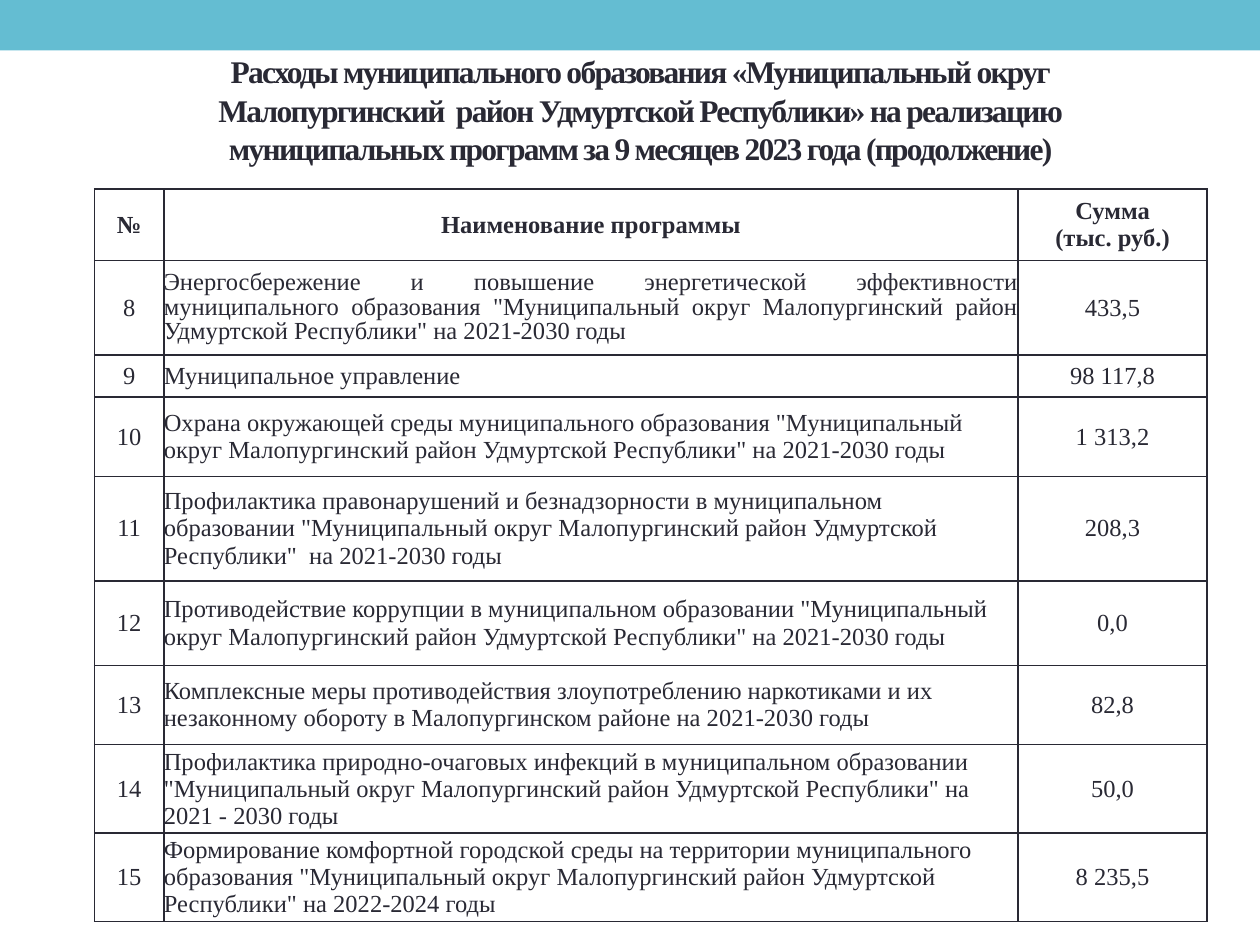
from dataclasses import dataclass
from lxml import etree
from pptx import Presentation
from pptx.dml.color import RGBColor
from pptx.enum import shapes, text
from pptx.oxml.ns import qn
from pptx.util import Inches, Pt


@dataclass(frozen=True)
class Theme:
    ink: str = "292934"
    band: str = "64BDD2"
    font: str = "Times New Roman"
    head: int = 18
    body: int = 14
    rule: int = 1


THEME = Theme()
WIDE, HIGH = Inches(10), Inches(7.5)
MID, LEFT, FULL = text.PP_ALIGN.CENTER, text.PP_ALIGN.LEFT, text.PP_ALIGN.JUSTIFY

TITLE = [
    "Расходы муниципального образования «Муниципальный округ",
    "Малопургинский  район Удмуртской Республики» на реализацию",
    "муниципальных программ за 9 месяцев 2023 года (продолжение)",
]
HEADS = ["№", "Наименование программы", "Сумма\n(тыс. руб.)"]
ROWS = [
    ("Энергосбережение и повышение энергетической эффективности муниципального образования "
     '"Муниципальный округ Малопургинский район Удмуртской Республики" на 2021-2030 годы', "433,5"),
    ("Муниципальное управление", "98 117,8"),
    ('Охрана окружающей среды муниципального образования "Муниципальный округ '
     'Малопургинский район Удмуртской Республики" на 2021-2030 годы', "1 313,2"),
    ("Профилактика правонарушений и безнадзорности в муниципальном образовании "
     '"Муниципальный округ Малопургинский район Удмуртской Республики"  на 2021-2030 годы', "208,3"),
    ('Противодействие коррупции в муниципальном образовании "Муниципальный округ '
     'Малопургинский район Удмуртской Республики" на 2021-2030 годы', "0,0"),
    ("Комплексные меры противодействия злоупотреблению наркотиками и их незаконному обороту "
     "в Малопургинском районе на 2021-2030 годы", "82,8"),
    ("Профилактика природно-очаговых инфекций в муниципальном образовании "
     '"Муниципальный округ Малопургинский район Удмуртской Республики" на 2021 - 2030 годы', "50,0"),
    ("Формирование комфортной городской среды на территории муниципального образования "
     '"Муниципальный округ Малопургинский район Удмуртской Республики" на 2022-2024 годы', "8 235,5"),
]
FIRST = 8
COLS = [55, 678, 150]
TALL = [53, 75, 32, 63, 83, 67, 63, 67, 67]


def area(x, y, w, h):
    return int(x * WIDE), int(y * HIGH), int(w * WIDE), int(h * HIGH)


def write(frame, words, size=THEME.body, bold=False, align=MID, lead=None, track=None):
    frame.word_wrap = True
    frame.vertical_anchor = text.MSO_ANCHOR.MIDDLE
    frame.text = words
    for para in frame.paragraphs:
        para.alignment = align
        if lead:
            para.line_spacing = lead
        for run in para.runs:
            font = run.font
            font.name, font.size, font.bold = THEME.font, Pt(size), bold
            font.color.rgb = RGBColor.from_string(THEME.ink)
            if track:
                run._r.get_or_add_rPr().set("spc", str(track * 100))


def border(cell):
    props = cell._tc.get_or_add_tcPr()
    for spot, side in enumerate(("lnL", "lnR", "lnT", "lnB")):
        line = etree.Element(qn(f"a:{side}"), w=str(Pt(THEME.rule)))
        fill = etree.SubElement(line, qn("a:solidFill"))
        etree.SubElement(fill, qn("a:srgbClr"), val=THEME.ink)
        props.insert(spot, line)


def band(slide, box):
    bar = slide.shapes.add_shape(shapes.MSO_SHAPE.RECTANGLE, *box)
    bar.shadow.inherit = False
    bar.fill.solid()
    bar.fill.fore_color.rgb = RGBColor.from_string(THEME.band)
    bar.line.fill.background()


def title(slide, box):
    frame = slide.shapes.add_textbox(*box).text_frame
    write(frame, "\v".join(TITLE), size=THEME.head, bold=True, lead=1.03, track=-1)


def budget(slide, box):
    grid = slide.shapes.add_table(len(TALL), len(COLS), *box).table
    for col, part in zip(grid.columns, COLS):
        col.width = box[2] * part // sum(COLS)
    for row, part in zip(grid.rows, TALL):
        row.height = box[3] * part // sum(TALL)
    data = [HEADS] + [(str(n), *row) for n, row in enumerate(ROWS, FIRST)]
    for r, row in enumerate(data):
        for c, words in enumerate(row):
            cell = grid.cell(r, c)
            cell.fill.background()
            border(cell)
            cell.vertical_anchor = text.MSO_ANCHOR.MIDDLE
            name = r > 0 and c == 1
            if name:
                cell.margin_left = cell.margin_right = 0
                cell.margin_top = cell.margin_bottom = 0
            first = name and r == 1
            write(cell.text_frame, words, bold=r == 0,
                  align=FULL if first else LEFT if name else MID,
                  lead=0.9 if first else None)


def main():
    deck = Presentation()
    deck.slide_width, deck.slide_height = WIDE, HIGH
    slide = deck.slides.add_slide(deck.slide_layouts[6])
    band(slide, area(0, 0, 1, 0.4 / 7.5))
    title(slide, area(0.042, 0.33 / 7.5, 0.933, 1.07 / 7.5))
    budget(slide, area(0.075, 0.2, 0.883, 0.76))
    deck.save("out.pptx")


if __name__ == "__main__":
    main()
